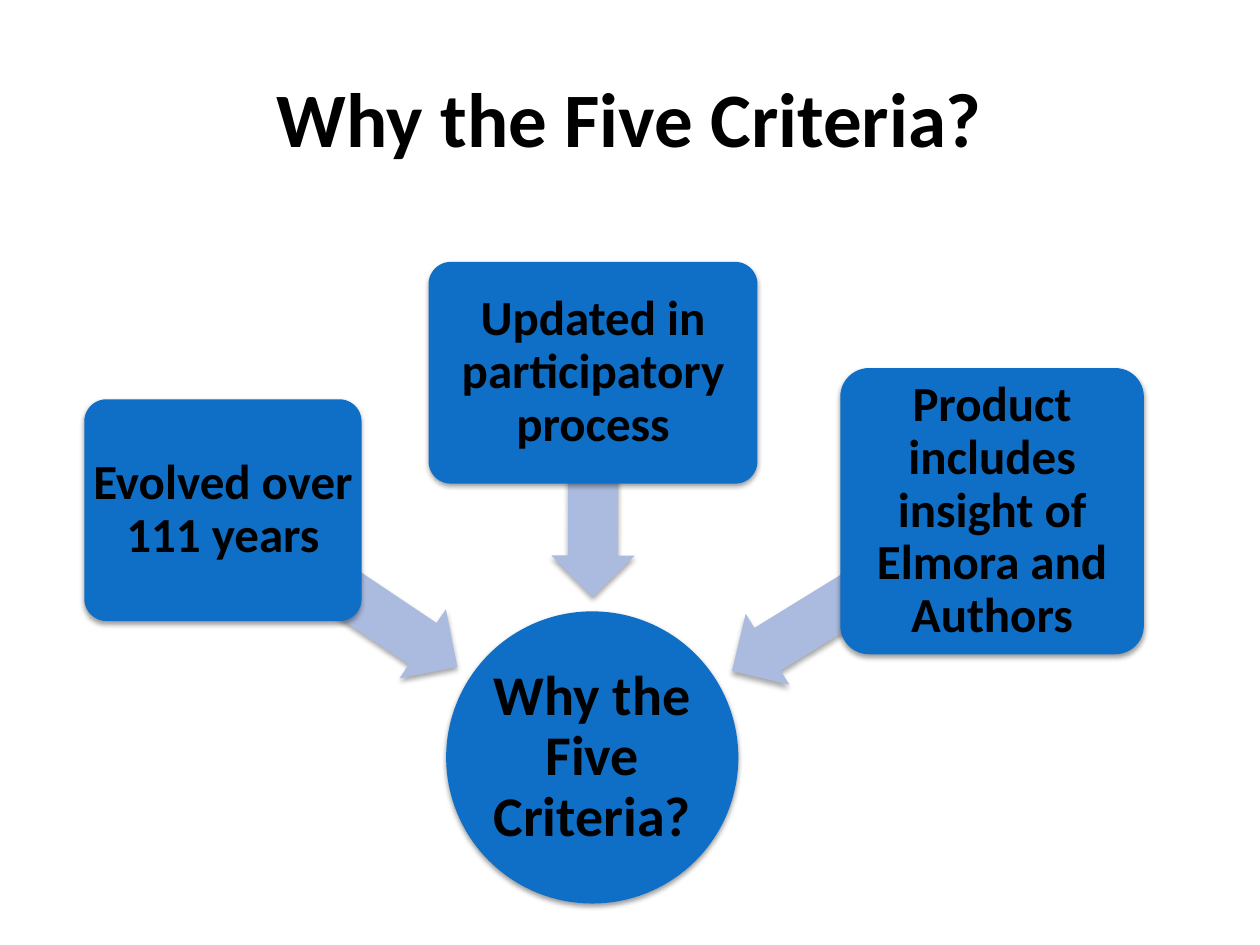
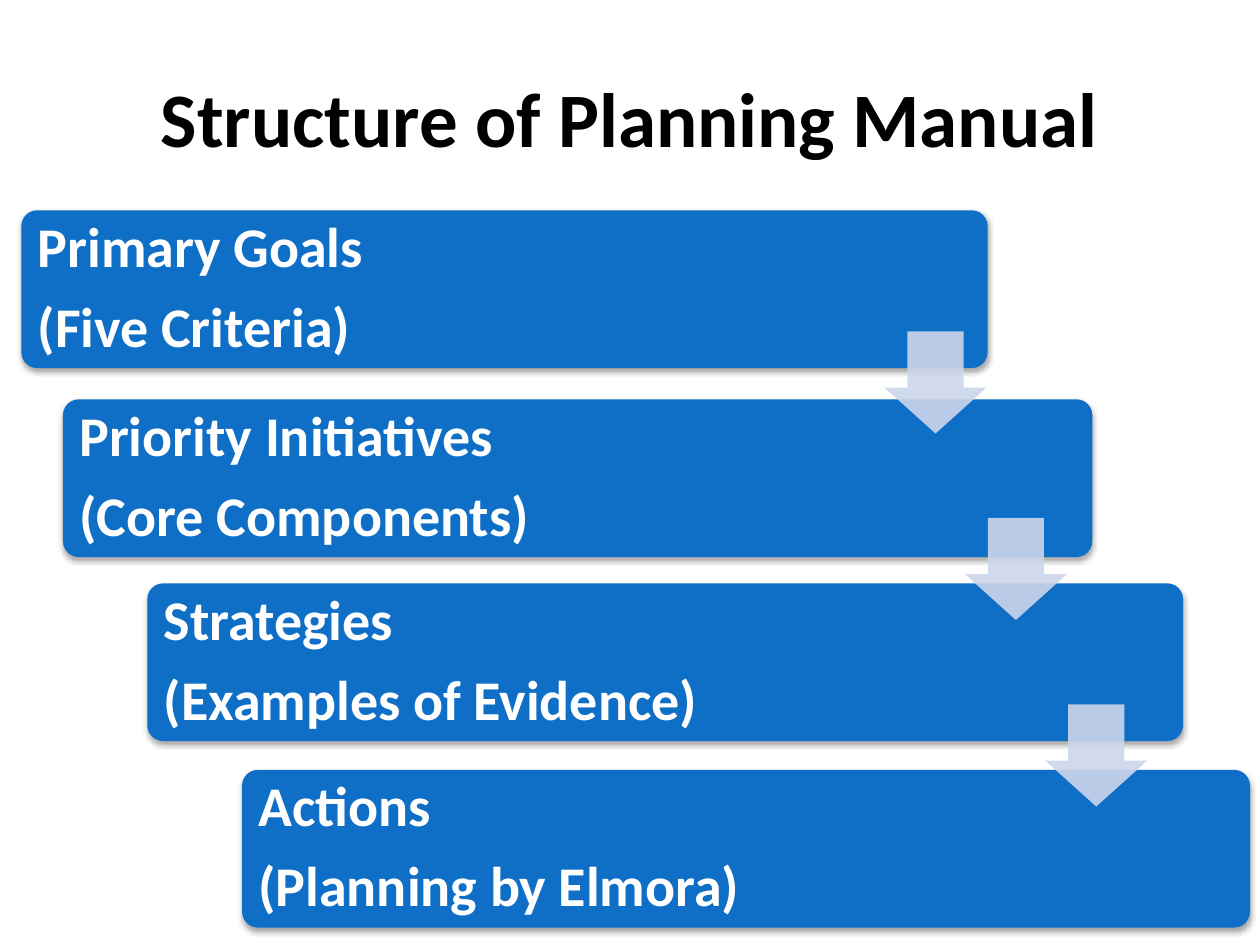
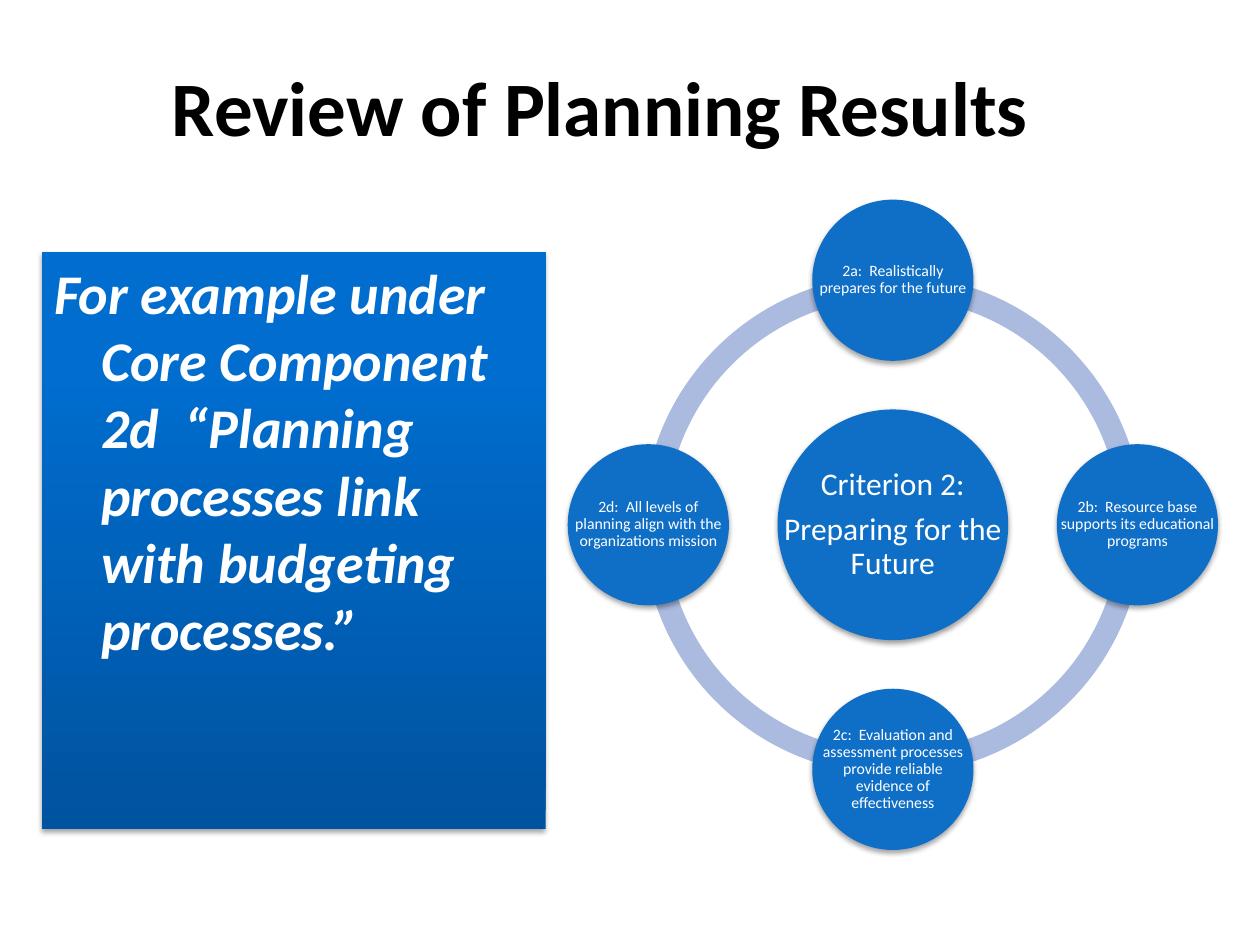
import math
from dataclasses import dataclass

from lxml import etree
from pptx import Presentation
from pptx.dml.color import RGBColor
from pptx.enum import shapes, text
from pptx.oxml import ns
from pptx.util import Cm, Pt


@dataclass(frozen=True)
class Theme:
    font: str = "Calibri"
    black: str = "000000"
    white: str = "FFFFFF"
    blue: str = "0F6FC6"
    link: str = "ABBBDF"
    step: str = "CCD5EA"
    panel_dark: str = "00539F"
    panel_light: str = "006DCF"
    title: int = 44
    large: int = 32
    box: int = 28
    hub: int = 18
    small: int = 9
    line_spacing: float = 0.9
    gap_after: float = 0.35
    corner: float = 0.1


T = Theme()
MSO = shapes.MSO_SHAPE
LEFT, CENTER = text.PP_ALIGN.LEFT, text.PP_ALIGN.CENTER
MIDDLE, TOP = text.MSO_ANCHOR.MIDDLE, text.MSO_ANCHOR.TOP


def rgb(value):
    return RGBColor.from_string(value)


def add_shadow(sp, opacity, distance):
    effects = sp._element.spPr.find(ns.qn("a:effectLst"))
    outer = etree.SubElement(
        effects, ns.qn("a:outerShdw"), blurRad=str(Pt(3.1)),
        dist=str(Pt(distance)), dir="5400000", rotWithShape="0")
    color = etree.SubElement(outer, ns.qn("a:srgbClr"), val=T.black)
    etree.SubElement(color, ns.qn("a:alpha"), val=str(opacity * 1000))


def add_figure(slide, kind, box, fill, adjust=(), rotation=0, shadow=(35, 1.8)):
    sp = slide.shapes.add_shape(kind, *map(Cm, box))
    sp.shadow.inherit = False
    sp.line.fill.background()
    sp.fill.solid()
    sp.fill.fore_color.rgb = rgb(fill)
    sp.rotation = rotation
    for i, value in enumerate(adjust):
        sp.adjustments[i] = value
    if shadow:
        add_shadow(sp, *shadow)
    return sp


def add_run(p, words, size, color, bold=False, italic=False):
    r = p.add_run()
    r.text = words
    r.font.name = T.font
    r.font.size = Pt(size)
    r.font.color.rgb = rgb(color)
    r.font.bold = bold
    r.font.italic = italic


def set_frame(sp, inset_x, inset_y, anchor=MIDDLE):
    tf = sp.text_frame
    tf.word_wrap = True
    tf.vertical_anchor = anchor
    tf.margin_left = tf.margin_right = Cm(inset_x)
    tf.margin_top = tf.margin_bottom = Cm(inset_y)
    return tf


def write_lines(sp, lines, size, color, inset, align=CENTER, bold=False):
    tf = set_frame(sp, inset, inset)
    for i, line in enumerate(lines):
        p = tf.add_paragraph() if i else tf.paragraphs[0]
        p.alignment = align
        p.line_spacing = T.line_spacing
        p.space_after = Pt(size * T.gap_after)
        add_run(p, line, size, color, bold)


def add_title_slide(prs, title, box=(1.27, 0.76, 22.86, 3.18)):
    slide = prs.slides.add_slide(prs.slide_layouts[5])
    sp = slide.shapes.title
    sp.left, sp.top, sp.width, sp.height = map(Cm, box)
    tf = set_frame(sp, 0.25, 0.13)
    p = tf.paragraphs[0]
    p.alignment = CENTER
    add_run(p, title, T.title, T.black, bold=True)
    return slide


def add_rounded_box(slide, box, lines, size, color, inset, align=CENTER,
                    shadow=(38, 1.6)):
    sp = add_figure(slide, MSO.ROUNDED_RECTANGLE, box, T.blue, [T.corner],
                    shadow=shadow)
    corner_inset = (1 - math.sqrt(0.5)) * T.corner * min(box[2:])
    write_lines(sp, lines, size, color, max(0, inset - corner_inset), align,
                bold=True)


def add_disc(slide, cx, cy, diameter, lines, size, color, inset, bold=False,
             shadow=(38, 1.6)):
    box = (cx - diameter / 2, cy - diameter / 2, diameter, diameter)
    add_figure(slide, MSO.OVAL, box, T.blue, shadow=shadow)
    label = slide.shapes.add_textbox(*map(Cm, box))
    write_lines(label, lines, size, color, inset, bold=bold)


def add_ring(slide, cx, cy, diameter):
    box = (cx - diameter / 2, cy - diameter / 2, diameter, diameter)
    quarter = 54
    for i in range(4):
        start, end = i * quarter, (i + 1) % 4 * quarter
        add_figure(slide, MSO.BLOCK_ARC, box, T.link, [start, end, 0.046],
                   shadow=None)


def add_panel(slide, box, words):
    sp = add_figure(slide, MSO.RECTANGLE, box, T.panel_light)
    sp.fill.gradient()
    sp.fill.gradient_angle = 90
    stops = zip(sp.fill.gradient_stops, (0, 0.8), (T.panel_dark, T.panel_light))
    for stop, position, color in stops:
        stop.position = position
        stop.color.rgb = rgb(color)
    p = set_frame(sp, 0.25, 0.13, TOP).paragraphs[0]
    p.alignment = LEFT
    p.space_before = Pt(T.large * 0.2)
    pPr = p._p.get_or_add_pPr()
    pPr.set("marL", str(Cm(0.95)))
    pPr.set("indent", str(-Cm(0.95)))
    add_run(p, words, T.large, T.white, bold=True, italic=True)


def add_step_arrow(slide, x, y):
    sp = add_figure(slide, MSO.DOWN_ARROW, (x, y, 2.06, 2.06), T.step,
                    [0.55, 0.45], shadow=None)
    color = sp._element.spPr.find(".//" + ns.qn("a:srgbClr"))
    etree.SubElement(color, ns.qn("a:alpha"), val="90000")


def build_reasons(prs):
    slide = add_title_slide(prs, "Why the Five Criteria?")
    add_disc(slide, 11.94, 15.27, 5.89, ["Why the Five Criteria?"], T.large,
             T.black, 0.05, bold=True)
    reasons = [
        ("Evolved over 111 years", (1.7, 8.05, 5.59, 4.47),
         (4.01, 11.02, 5.69, 1.68), 213.8),
        ("Updated in participatory process", (8.64, 5.28, 6.63, 4.47),
         (9.7, 8.94, 4.52, 1.68), 270.2),
        ("Product includes insight of Elmora and Authors",
         (16.94, 7.42, 6.12, 5.77), (14.3, 11.07, 6.17, 1.68), 328.4),
    ]
    for words, box, arrow, rotation in reasons:
        add_figure(slide, MSO.LEFT_ARROW, arrow, T.link, [0.6, 0.5], rotation)
        add_rounded_box(slide, box, [words], T.box, T.black, 0.15)


def build_structure(prs):
    slide = add_title_slide(prs, "Structure of Planning Manual")
    levels = [
        (0.43, 4.24, 19.48, "Primary Goals", "(Five Criteria)"),
        (1.27, 8.05, 20.75, "Priority Initiatives", "(Core Components)"),
        (2.97, 11.76, 20.88, "Strategies", "(Examples of Evidence)"),
        (4.88, 15.52, 20.32, "Actions", "(Planning by Elmora)"),
    ]
    for x, y, width, *lines in levels:
        add_rounded_box(slide, (x, y, width, 3.18), lines, T.large, T.white,
                        0.33, LEFT, shadow=(35, 1.8))
    for i in range(len(levels) - 1):
        add_step_arrow(slide, 17.83 + 1.62 * i, 6.68 + 3.76 * i)


def build_review(prs):
    slide = add_title_slide(prs, "Review of Planning Results ",
                            (1.27, 0.64, 22.02, 2.97))
    add_panel(slide, (0.84, 5.08, 10.16, 11.63),
              "For example under Core Component 2d  “Planning processes link "
              "with budgeting processes.”")
    cx, cy, orbit = 18, 10.58, 4.93
    add_ring(slide, cx, cy, 10.08)
    add_disc(slide, cx, cy, 4.65, ["Criterion 2:", "Preparing for the Future"],
             T.hub, T.white, 0.08)
    components = [
        "2a:  Realistically prepares for the future",
        "2b:  Resource base supports its educational programs",
        "2c:  Evaluation and assessment processes provide reliable evidence "
        "of effectiveness",
        "2d:  All levels of planning align with the organizations mission",
    ]
    for i, words in enumerate(components):
        angle = math.tau * i / len(components)
        add_disc(slide, cx + orbit * math.sin(angle),
                 cy - orbit * math.cos(angle), 3.25, [words], T.small,
                 T.white, 0.03, shadow=(35, 1.8))


def main():
    prs = Presentation()
    prs.slide_width, prs.slide_height = Cm(25.4), Cm(19.05)
    build_reasons(prs)
    build_structure(prs)
    build_review(prs)
    prs.save("out.pptx")


if __name__ == "__main__":
    main()
